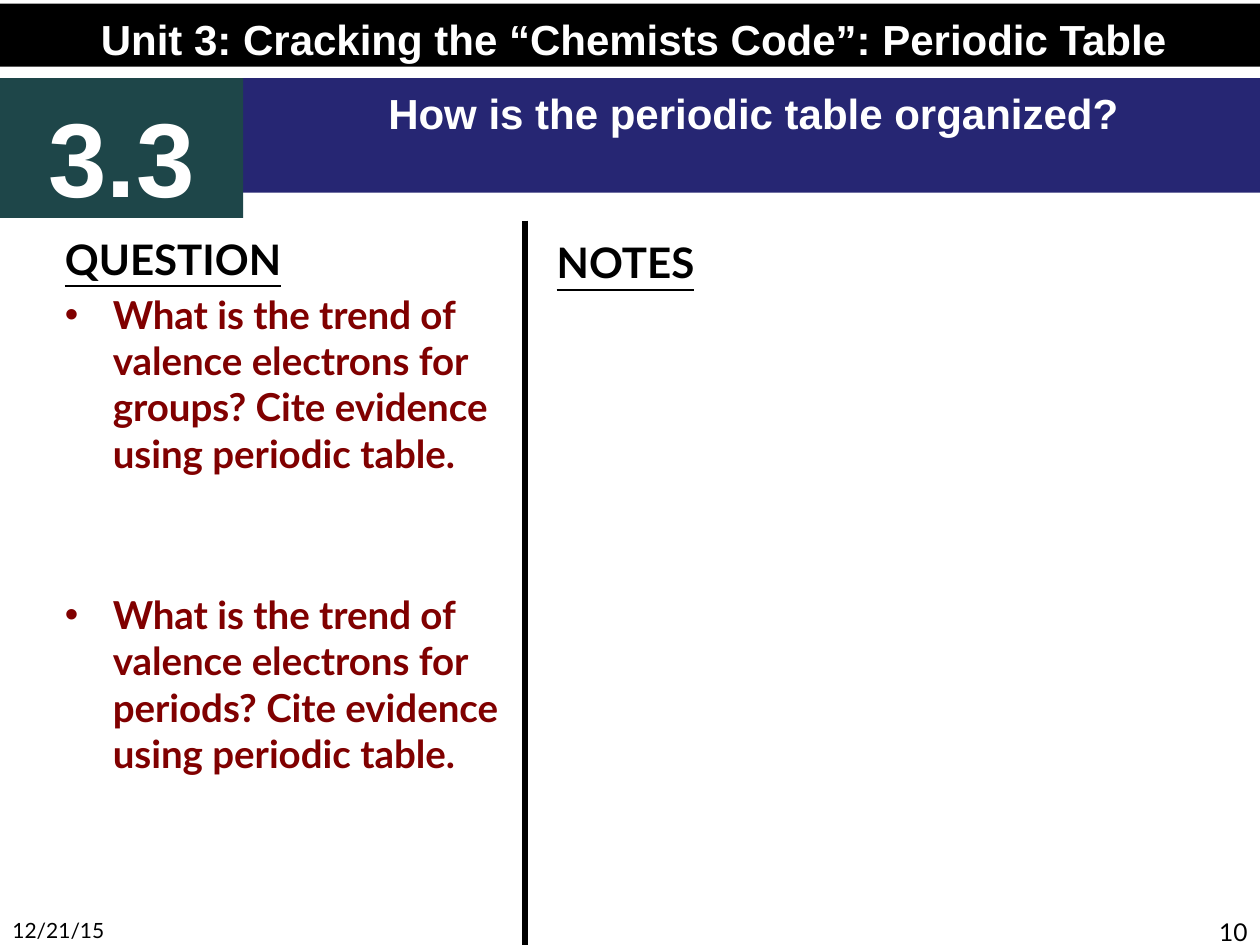
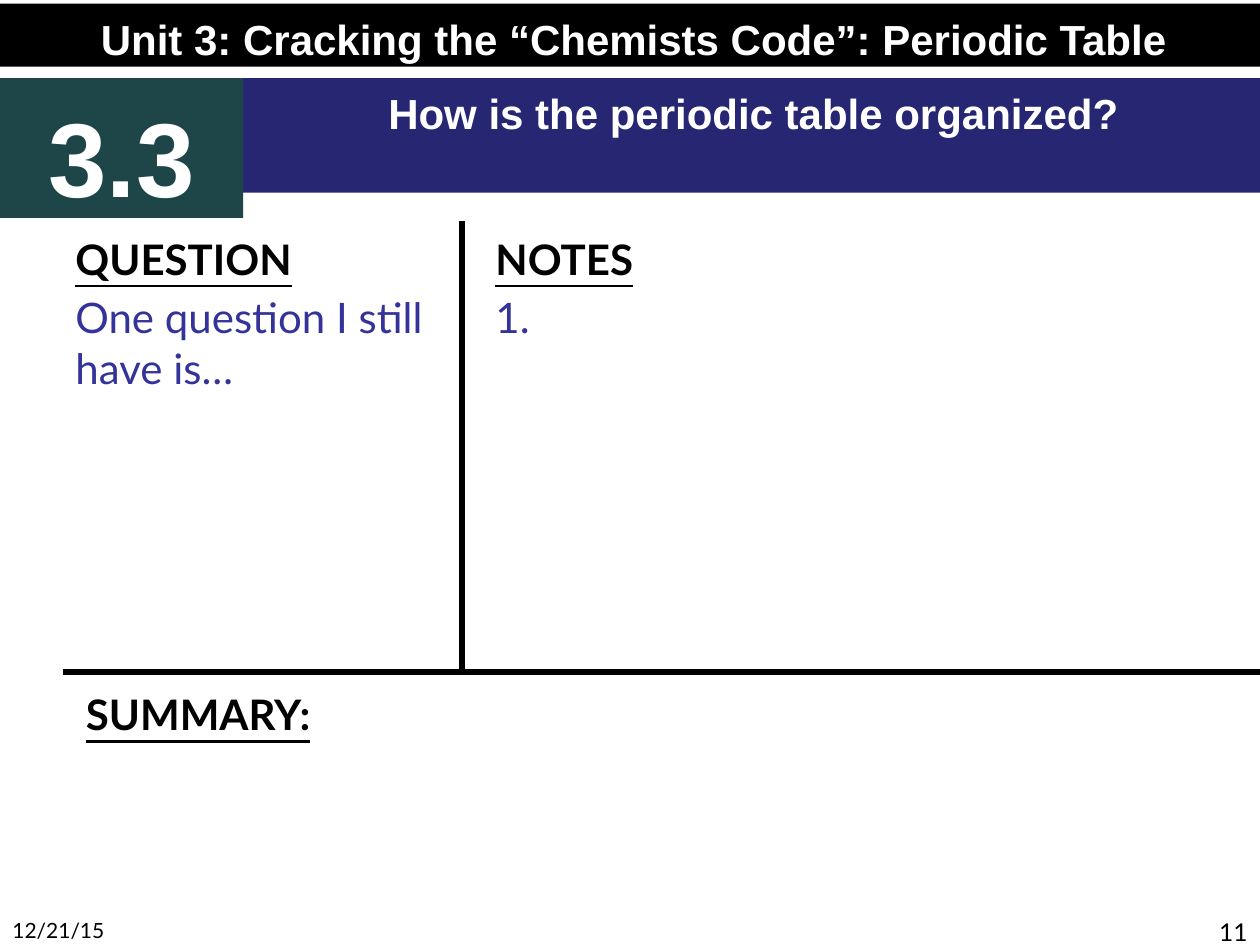
"""Build two question-and-notes slides on the periodic table."""
import dataclasses

import lxml.etree
import pptx
import pptx.dml.color
import pptx.enum.shapes
import pptx.enum.text
import pptx.oxml.ns
import pptx.util

COLS, ROWS = 60, 45
ALIGN = pptx.enum.text.PP_ALIGN


@dataclasses.dataclass(frozen=True)
class Theme:
    """Hold colours, fonts and type sizes."""
    black: str = "000000"
    white: str = "FFFFFF"
    teal: str = "1E4649"
    navy: str = "262673"
    blue: str = "333399"
    maroon: str = "800000"
    head: str = "Arial"
    body: str = "Lato"
    large: int = 60
    main: int = 24
    point: int = 22
    page: int = 14
    date: int = 12
    rule: int = 3


T = Theme()
BAND = dict(name=T.head, size=T.main, bold=True, color=T.white)
LABEL = dict(name=T.body, size=T.main, bold=True, underline=True, color=T.black)
PROMPT = dict(name=T.body, size=T.main, color=T.blue)
POINT = dict(name=T.body, size=T.point, bold=True, color=T.maroon)
FOOT = dict(name=T.body, color=T.black)


def rgb(code):
    """Turn a hex code into a colour."""
    return pptx.dml.color.RGBColor.from_string(code)


def grid(col, row):
    """Turn grid columns and rows into slide lengths."""
    return (pptx.util.Inches(10 * col / COLS),
            pptx.util.Inches(7.5 * row / ROWS))


def place(shape, col, row, wide, high):
    """Move a shape to its grid cell."""
    shape.left, shape.top = grid(col, row)
    shape.width, shape.height = grid(wide, high)


def style(font, form):
    """Set a font from a dict of format values."""
    for key, value in form.items():
        if key == "color":
            font.color.rgb = rgb(value)
        else:
            setattr(font, key, pptx.util.Pt(value) if key == "size" else value)


def frame(shape, pad=0.05):
    """Give a shape a wrapped, top-set text frame."""
    text = shape.text_frame
    values = dict(word_wrap=True, auto_size=pptx.enum.text.MSO_AUTO_SIZE.NONE,
                  vertical_anchor=pptx.enum.text.MSO_ANCHOR.TOP,
                  margin_left=pptx.util.Inches(0.1),
                  margin_right=pptx.util.Inches(0.1),
                  margin_top=pptx.util.Inches(pad),
                  margin_bottom=pptx.util.Inches(0.05))
    for key, value in values.items():
        setattr(text, key, value)
    return text


def band(shape, cell, text, fill, form):
    """Fill a shape as a band with centred text."""
    place(shape, *cell)
    shape.fill.solid()
    shape.fill.fore_color.rgb = rgb(fill)
    shape.line.fill.background()
    para = frame(shape, 0.05 + 0.08 * form["size"] / 72).paragraphs[0]
    para.text, para.alignment = text, ALIGN.CENTER
    style(para.font, form)


def block(slide, cell):
    """Add a text box with an empty first paragraph."""
    box = slide.shapes.add_textbox(0, 0, 0, 0)
    place(box, *cell)
    return frame(box)


def bullet(para):
    """Give a paragraph a round bullet and hanging indent."""
    props = para._p.get_or_add_pPr()
    props.set("marL", str(pptx.util.Inches(0.38)))
    props.set("indent", str(pptx.util.Inches(-0.38)))
    for tag, key, value in (("a:buFont", "typeface", T.head),
                            ("a:buChar", "char", "•")):
        item = lxml.etree.SubElement(props, pptx.oxml.ns.qn(tag))
        item.set(key, value)


def panel(slide, cell, label, lines=(), form=PROMPT, gap=0, dots=False):
    """Add a box with an underlined label and lines, gap points apart."""
    text = block(slide, cell)
    first = text.paragraphs[0]
    first.text = label
    style(first.font, LABEL)
    for index, line in enumerate(lines):
        para = text.add_paragraph()
        para.text = line
        if dots:
            bullet(para)
        space = gap if index else 0.2 * form["size"]
        para.space_before = pptx.util.Pt(space)
        style(para.font, form)


def foot(slide, col, text, size, align):
    """Add one footer text."""
    para = block(slide, (col, 43.38, 14, 1.62)).paragraphs[0]
    para.text, para.alignment = text, align
    style(para.font, {**FOOT, "size": size})


def rule(slide, start, end):
    """Draw a straight black rule between grid points."""
    kind = pptx.enum.shapes.MSO_CONNECTOR.STRAIGHT
    line = slide.shapes.add_connector(kind, *grid(*start), *grid(*end))
    line.line.color.rgb = rgb(T.black)
    line.line.width = pptx.util.Pt(T.rule)
    props = line._element.spPr
    lxml.etree.SubElement(props, pptx.oxml.ns.qn("a:effectLst"))


def base(deck, page):
    """Add a slide with the shared bands and footers."""
    slide = deck.slides.add_slide(deck.slide_layouts[5])
    bands = (
        ((0, 0.18, 60.36, 3), "Unit 3: Cracking the “Chemists Code”: Periodic Table",
         T.black, BAND),
        ((0, 3.72, 11.58, 6.66), "3.3", T.teal, {**BAND, "size": T.large}),
    )
    for cell, text, fill, form in bands:
        kind = pptx.enum.shapes.MSO_SHAPE.RECTANGLE
        shape = slide.shapes.add_shape(kind, 0, 0, 0, 0)
        shape.shadow.inherit = False
        band(shape, cell, text, fill, form)
    band(slide.shapes.title, (11.58, 3.72, 48.6, 5.46),
         "How is the periodic table organized?", T.navy, BAND)
    foot(slide, 0, "12/21/15", T.date, ALIGN.LEFT)
    foot(slide, 46, str(page), T.page, ALIGN.RIGHT)
    return slide


def trends(deck):
    """Build the slide that asks about trends."""
    slide = base(deck, 10)
    asks = [f"What is the trend of valence electrons for {kind}? "
            "Cite evidence using periodic table."
            for kind in ("groups", "periods")]
    rule(slide, (25, 10.5), (25, ROWS))
    panel(slide, (2.5, 10.8, 22, 29.7), "QUESTION", asks, POINT, 66, True)
    panel(slide, (25.92, 10.98, 34, 29.7), "NOTES")


def summary(deck):
    """Build the slide with room for a summary."""
    slide = base(deck, 11)
    panel(slide, (3, 10.8, 19, 20.7), "QUESTION", ["One question I still have is…"])
    panel(slide, (23, 10.8, 37, 20.7), "NOTES", ["1."])
    panel(slide, (3.5, 32.5, 56.5, 12.5), "SUMMARY:")
    rule(slide, (22, 10.5), (22, 32))
    rule(slide, (COLS, 32), (3, 32))


def main():
    """Build and save the deck."""
    deck = pptx.Presentation()
    deck.slide_width, deck.slide_height = grid(COLS, ROWS)
    trends(deck)
    summary(deck)
    deck.save("out.pptx")


if __name__ == "__main__":
    main()
